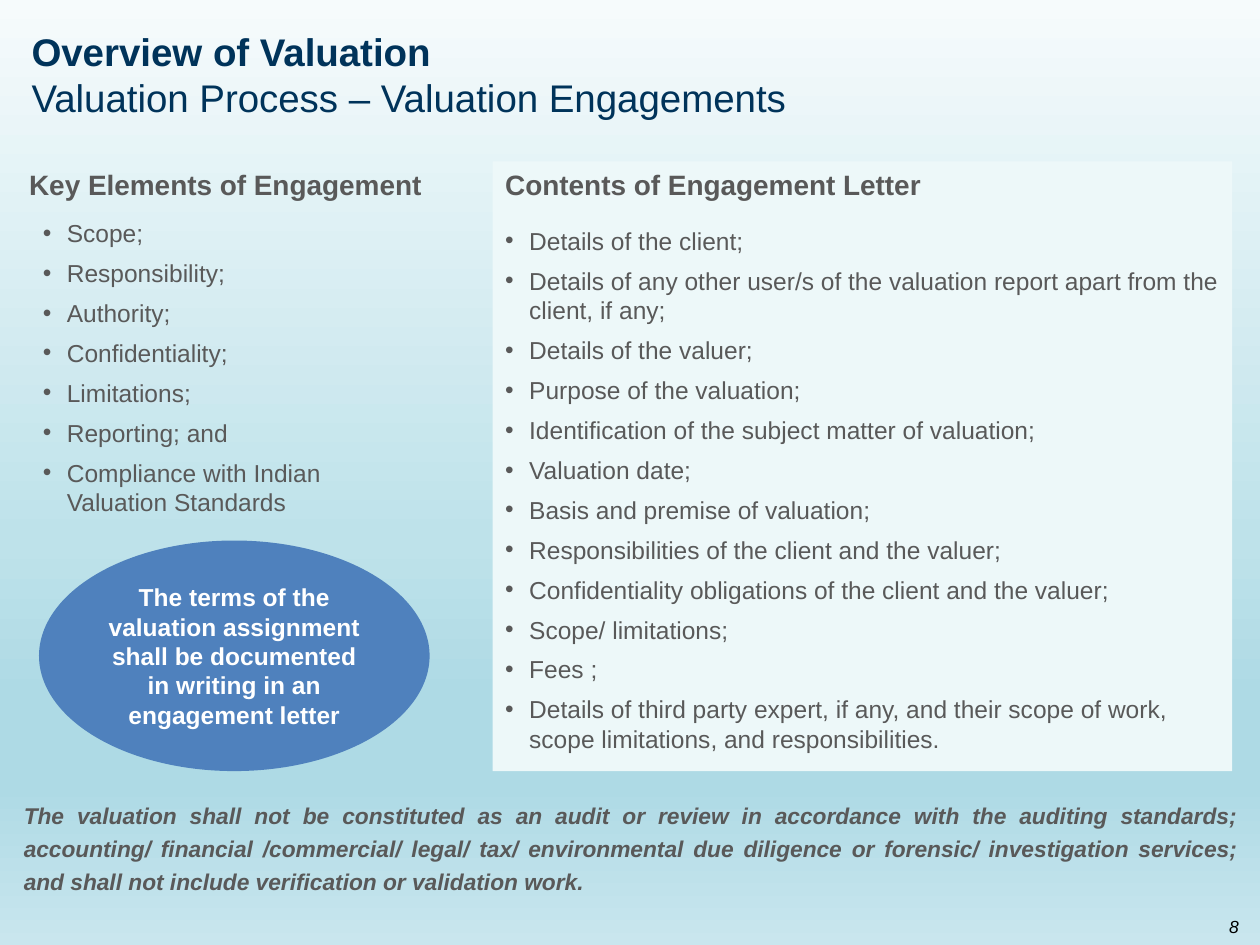
"""Build the slide on valuation engagements."""
from pptx import Presentation
from pptx.dml.color import RGBColor
from pptx.enum.shapes import MSO_SHAPE
from pptx.enum.text import MSO_ANCHOR, MSO_AUTO_SIZE, PP_ALIGN
from pptx.oxml.ns import qn
from pptx.util import Inches, Pt
from lxml.etree import SubElement

TITLE = ["Overview of Valuation", "Valuation Process – Valuation Engagements"]
ELEMENTS_HEADING = "Key Elements of Engagement"
ELEMENTS = [
    "Scope;",
    "Responsibility;",
    "Authority;",
    "Confidentiality;",
    "Limitations;",
    "Reporting; and",
    "Compliance with Indian Valuation Standards",
]
LETTER_HEADING = "Contents of Engagement Letter"
LETTER = [
    "Details of the client;",
    "Details of any other user/s of the valuation report apart from the client, if any;",
    "Details of the valuer;",
    "Purpose of the valuation;",
    "Identification of the subject matter of valuation;",
    "Valuation date;",
    "Basis and premise of valuation;",
    "Responsibilities of the client and the valuer;",
    "Confidentiality obligations of the client and the valuer;",
    "Scope/ limitations;",
    "Fees ;",
    "Details of third party expert, if any, and their scope of work, "
    "scope limitations, and responsibilities.",
]
CALLOUT = ("The terms of the valuation assignment shall be documented "
           "in writing in an engagement letter")
DISCLAIMER = (
    "The valuation shall not be constituted as an audit or review in accordance with the "
    "auditing standards; accounting/ financial /commercial/ legal/ tax/ environmental due "
    "diligence or forensic/ investigation services; and shall not include verification or "
    "validation work."
)
PAGE_NUMBER = "8"

NAVY, GREY, WHITE, BLACK = "00335A", "595959", "FFFFFF", "000000"
PANEL, BLUE = "EDF8F9", "4F81BD"
BACKGROUND = [(0, "F6FBFC"), (57, "BEE2EA"), (74, "AEDAE5"), (83, "AEDAE5"), (100, "C9E6EE")]

WIDTH, HEIGHT = Inches(10), Inches(7.5)
AREAS = {  # left, top, width, height in percent of the slide
    "title": (1.5, 0.53, 96.9, 14.67),
    "heading": (1.1, 17.07, 33.6, 4.93),
    "elements": (2.4, 22.4, 28.2, 33.2),
    "letter": (39.1, 17.07, 58.7, 64.53),
    "callout": (3.1, 57.2, 31, 24.4),
    "disclaimer": (0.9, 83.6, 98.2, 12.53),
    "number": (76, 95.33, 23.3, 5.33),
}


def color(value):
    return RGBColor.from_string(value)


def area(name):
    return [int(side * share / 100)
            for side, share in zip((WIDTH, HEIGHT) * 2, AREAS[name])]


def place(shape, name):
    shape.left, shape.top, shape.width, shape.height = area(name)
    return shape


def fill_solid(shape, value):
    shape.fill.solid()
    shape.fill.fore_color.rgb = color(value)
    shape.line.fill.background()


def write(shape, lines, size, ink, bold=False, italic=False,
          align=PP_ALIGN.LEFT, anchor=MSO_ANCHOR.TOP, wrap=True):
    frame = shape.text_frame
    frame.text = "\n".join(lines)
    frame.word_wrap = wrap
    frame.auto_size = MSO_AUTO_SIZE.NONE
    frame.vertical_anchor = anchor
    for para in frame.paragraphs:
        para.alignment = align
        para.space_before = Pt(0)
        for span in para.runs:
            span.font.name, span.font.size = "Arial", Pt(size)
            span.font.bold, span.font.italic = bold, italic
            span.font.color.rgb = color(ink)
    return frame.paragraphs


def set_bullet(para, symbol=None):
    properties = para._p.get_or_add_pPr()
    indent = Inches(0.19) if symbol else 0
    properties.set("marL", str(indent))
    properties.set("indent", str(-indent))
    if symbol:
        SubElement(properties, qn("a:buFont"), typeface="Arial")
        SubElement(properties, qn("a:buChar"), char=symbol)
    else:
        SubElement(properties, qn("a:buNone"))


def write_list(shape, items, heading=None):
    paragraphs = write(shape, ([heading] if heading else []) + items, 14, GREY)
    for para in paragraphs:
        para.space_after = Pt(6)
        set_bullet(para, None if para.text == heading else "•")
    if heading:
        paragraphs[0].space_after = Pt(14)
        paragraphs[0].runs[0].font.size = Pt(16)
        paragraphs[0].runs[0].font.bold = True


def paint_background(page):
    fill = page.background.fill
    fill.gradient()
    fill.gradient_angle = 270
    stops = page.element.find(".//" + qn("a:gsLst"))
    for stop in list(stops):
        stops.remove(stop)
    for percent, value in BACKGROUND:
        stop = SubElement(stops, qn("a:gs"), pos=str(percent * 1000))
        SubElement(stop, qn("a:srgbClr"), val=value)


def main():
    deck = Presentation()
    deck.slide_width, deck.slide_height = WIDTH, HEIGHT
    page = deck.slides.add_slide(deck.slide_layouts[3])
    paint_background(page)
    title, elements, letter = page.placeholders

    paragraphs = write(place(title, "title"), TITLE, 22, NAVY, anchor=MSO_ANCHOR.MIDDLE)
    paragraphs[0].runs[0].font.bold = True

    write_list(place(elements, "elements"), ELEMENTS)
    write_list(place(letter, "letter"), LETTER, LETTER_HEADING)
    fill_solid(letter, PANEL)

    heading = page.shapes.add_textbox(*area("heading"))
    write(heading, [ELEMENTS_HEADING], 16, GREY, bold=True, align=PP_ALIGN.CENTER, wrap=False)

    callout = page.shapes.add_shape(MSO_SHAPE.OVAL, *area("callout"))
    callout.shadow.inherit = False
    fill_solid(callout, BLUE)
    write(callout, [CALLOUT], 14, WHITE, bold=True,
          align=PP_ALIGN.CENTER, anchor=MSO_ANCHOR.MIDDLE)

    disclaimer = page.shapes.add_textbox(*area("disclaimer"))
    paragraphs = write(disclaimer, [DISCLAIMER], 13, GREY, bold=True, italic=True,
                       align=PP_ALIGN.JUSTIFY)
    paragraphs[0].line_spacing = 1.2

    number = page.shapes.add_textbox(*area("number"))
    write(number, [PAGE_NUMBER], 10, BLACK, italic=True,
          align=PP_ALIGN.RIGHT, anchor=MSO_ANCHOR.MIDDLE)

    deck.save("out.pptx")


if __name__ == "__main__":
    main()
